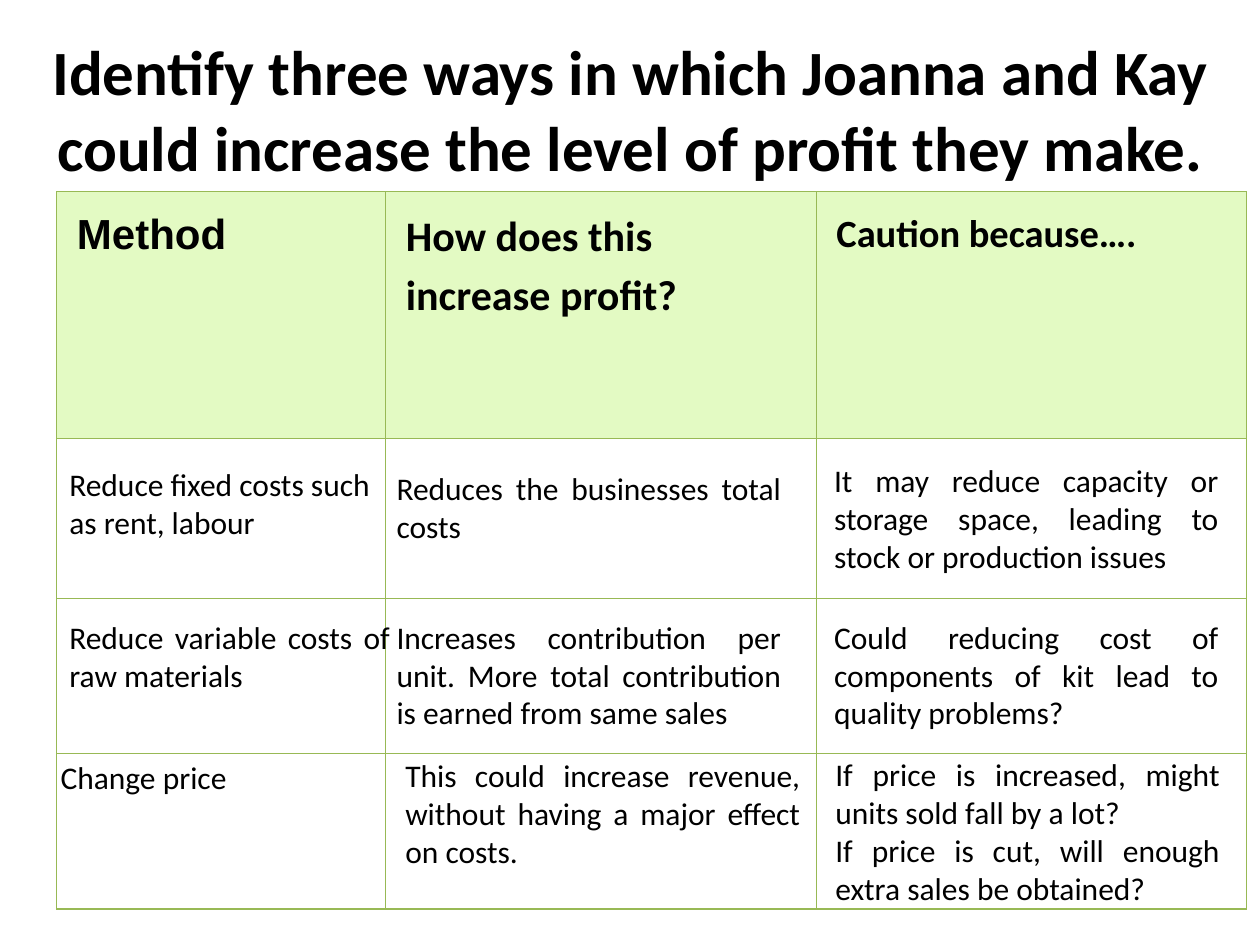
from dataclasses import dataclass

from lxml import etree
from pptx import Presentation
from pptx.dml.color import RGBColor
from pptx.enum.text import MSO_ANCHOR, MSO_AUTO_SIZE, PP_ALIGN
from pptx.oxml.ns import qn
from pptx.util import Pt

LEFT, CENTER, JUST = PP_ALIGN.LEFT, PP_ALIGN.CENTER, PP_ALIGN.JUSTIFY
TOP = MSO_ANCHOR.TOP
NO_FIT = MSO_AUTO_SIZE.NONE


@dataclass
class Theme:
    ink: str = "000000"
    head: str = "E3FAC3"
    paper: str = "FFFFFF"
    rule: str = "98B955"
    sans: str = "Calibri"
    alt: str = "Arial"
    title: int = 36
    large: int = 24
    mid: int = 22
    body: int = 18


theme = Theme()


def style(para, size, face=theme.sans, bold=False, align=LEFT):
    para.alignment = align
    font = para.font
    font.name, font.size, font.bold = face, Pt(size), bold
    font.color.rgb = RGBColor.from_string(theme.ink)


def border(cell):
    props = cell._tc.get_or_add_tcPr()
    for i, side in enumerate(("lnL", "lnR", "lnT", "lnB")):
        line = etree.Element(qn("a:" + side), w=str(Pt(0.75)))
        fill = etree.SubElement(line, qn("a:solidFill"))
        etree.SubElement(fill, qn("a:srgbClr"), val=theme.rule)
        props.insert(i, line)


prs = Presentation()
prs.slide_width, prs.slide_height = Pt(720), Pt(540)
slide = prs.slides.add_slide(prs.slide_layouts[5])

title = slide.shapes.title
title.left, title.top, title.width, title.height = Pt(20), Pt(15), Pt(680.5), Pt(94.5)
frame = title.text_frame
frame.text = "Identify three ways in which Joanna and Kay could increase the level of profit they make."
frame.word_wrap = True
frame.auto_size = NO_FIT
frame.vertical_anchor = TOP
style(frame.paragraphs[0], theme.title, bold=True, align=CENTER)

widths = (188, 246, 246)
heights = (141, 91.5, 88.75, 88.75)
heads = (
    ("Method", theme.large, theme.alt),
    ("How does this increase profit?", theme.large, theme.sans),
    ("Caution because….", theme.mid, theme.sans),
)
table = slide.shapes.add_table(
    len(heights), len(widths), Pt(32.5), Pt(109.5), Pt(sum(widths)), Pt(sum(heights))
).table
for col, width in zip(table.columns, widths):
    col.width = Pt(width)
for r, height in enumerate(heights):
    table.rows[r].height = Pt(height)
    for cell in table.rows[r].cells:
        cell.fill.solid()
        cell.fill.fore_color.rgb = RGBColor.from_string(theme.paper if r else theme.head)
        border(cell)
for cell, (text, size, face) in zip(table.rows[0].cells, heads):
    cell.margin_left, cell.margin_right = Pt(11.5), Pt(5.75)
    cell.margin_top = cell.margin_bottom = Pt(7.2)
    cell.text = text
    para = cell.text_frame.paragraphs[0]
    para.line_spacing = 1.15
    style(para, size, face, bold=True)

notes = (
    (32.5, 262, 187, 51, LEFT, "Reduce fixed costs such as rent, labour"),
    (219.5, 264.5, 234, 51, JUST, "Reduces the businesses total costs"),
    (469.5, 260, 234, 72.5, JUST,
     "It may reduce capacity or storage space, leading to stock or production issues"),
    (32.5, 349.5, 197.5, 51, JUST, "Reduce variable costs of raw materials"),
    (219.5, 349.5, 234, 72.5, JUST,
     "Increases contribution per unit. More total contribution is earned from same sales"),
    (469.5, 349.5, 234, 72.5, JUST,
     "Could reducing cost of components of kit lead to quality problems?"),
    (27.5, 429.5, 197.5, 29, LEFT, "Change price"),
    (224.5, 428.5, 240, 72.5, JUST,
     "This could increase revenue, without having a major effect on costs."),
    (470.25, 428, 234, 94.5, JUST,
     "If price is increased, might units sold fall by a lot?\n"
     "If price is cut, will enough extra sales be obtained?"),
)
for x, y, w, h, align, text in notes:
    frame = slide.shapes.add_textbox(Pt(x), Pt(y), Pt(w), Pt(h)).text_frame
    frame.word_wrap = True
    frame.text = text
    for para in frame.paragraphs:
        style(para, theme.body, align=align)

prs.save("out.pptx")
